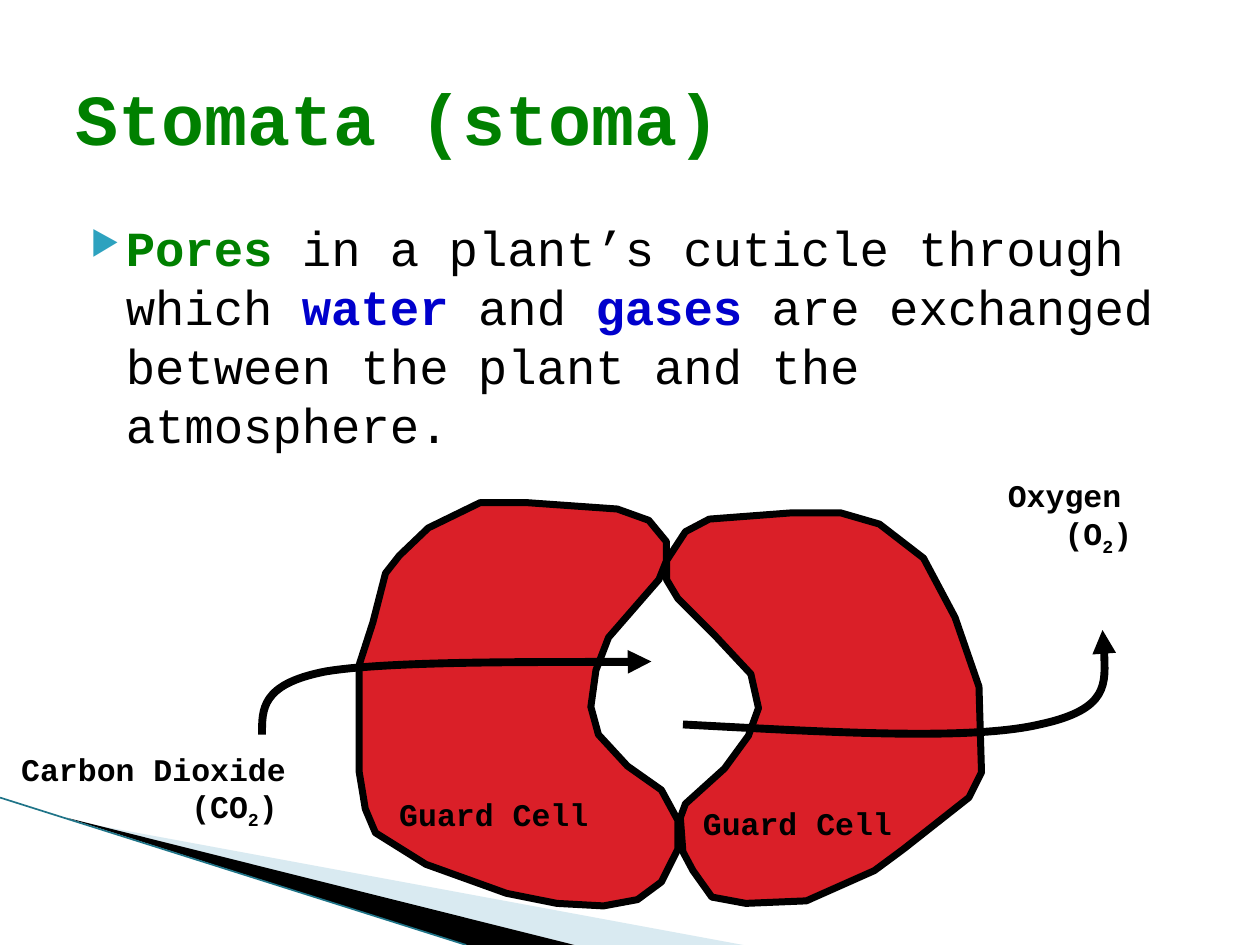
"""Build a slide that explains plant stomata with a guard cell diagram."""
from pptx import Presentation
from pptx.dml.color import RGBColor
from pptx.enum.shapes import MSO_CONNECTOR as Connector
from pptx.enum.text import MSO_ANCHOR as Anchor
from pptx.oxml.ns import qn
from pptx.util import Inches, Pt
from lxml.etree import SubElement

FONT = "Courier New"
BLACK = RGBColor(0x00, 0x00, 0x00)
GREEN = RGBColor(0x00, 0x80, 0x00)
BLUE = RGBColor(0x00, 0x00, 0xCC)
RED = RGBColor(0xDA, 0x1F, 0x28)
PALE = RGBColor(0xA0, 0xCB, 0xDC)
TEAL = RGBColor(0x1F, 0x74, 0x88)
BULLET = RGBColor(0x2D, 0xA2, 0xBF)

HEADING = {"size": Pt(41), "bold": True, "color": GREEN}
PLAIN = {"size": Pt(28), "bold": False, "color": BLACK}
KEY_GREEN = {**PLAIN, "bold": True, "color": GREEN}
KEY_BLUE = {**PLAIN, "bold": True, "color": BLUE}
LABEL = {"size": Pt(18), "bold": True, "color": BLACK}

TITLE = [[("Stomata (stoma)", HEADING)]]
DEFINITION = [[
    ("Pores", KEY_GREEN),
    (" in a plant’s cuticle through which ", PLAIN),
    ("water", KEY_BLUE),
    (" and ", PLAIN),
    ("gases", KEY_BLUE),
    (" are exchanged between the plant and the atmosphere.", PLAIN),
]]
GUARD_LABELS = [(5.48, 6.33), (3.07, 6.26)]
GAS_LABELS = [
    ("Carbon Dioxide", "(CO", 1.35, (0.07, 5.9, 2.66, 0.9)),
    ("Oxygen", "(O", 0.45, (7.9, 3.73, 1.42, 0.9)),
]

UNIT = Inches(0.01)
WEDGES = [
    ([(55, 651), (590, 750), (456, 750)], PALE, 40),
    ([(53, 649), (456, 750), (370, 750)], BLACK, 100),
]
GUARD_CELLS = [
    [(529, 430), (515, 413), (490, 404), (419, 399), (381, 399), (340, 419),
     (317, 441), (306, 455), (296, 494), (285, 528), (285, 612), (290, 642),
     (298, 661), (338, 686), (402, 709), (442, 717), (479, 719), (506, 714),
     (525, 700), (538, 674), (538, 651), (525, 627), (498, 608), (475, 583),
     (469, 561), (473, 532), (483, 506), (523, 460), (529, 445)],
    [(542, 676), (540, 649), (544, 638), (575, 610), (594, 584), (602, 562),
     (596, 535), (567, 504), (538, 475), (529, 460), (529, 445), (544, 422),
     (563, 412), (629, 407), (667, 407), (698, 416), (733, 443), (758, 490),
     (777, 545), (779, 613), (769, 633), (717, 674), (694, 691), (640, 715),
     (592, 717), (565, 712), (550, 691)],
]
GAS_ARROWS = [
    [(208, 583), (208, 563), (207, 543), (258, 533),
     (310, 524), (474, 526), (517, 525)],
    [(542, 575), (656, 581), (769, 588), (825, 575),
     (881, 563), (878, 531), (875, 500)],
]


def add_text(page, place, paragraphs, anchor=Anchor.TOP):
    box = page.shapes.add_textbox(*map(Inches, place))
    frame = box.text_frame
    frame.word_wrap = True
    frame.vertical_anchor = anchor
    for index, spans in enumerate(paragraphs):
        para = frame.add_paragraph() if index else frame.paragraphs[0]
        for text, style in spans:
            span = para.add_run()
            span.text = text
            span.font.name = FONT
            for name, value in style.items():
                if name == "color":
                    span.font.color.rgb = value
                else:
                    setattr(span.font, name, value)
    return frame


def set_indent(para, left, first=0):
    properties = para._p.get_or_add_pPr()
    properties.set("marL", str(Inches(left)))
    properties.set("indent", str(Inches(first)))
    return properties


def add_bullet(para):
    properties = set_indent(para, 0.4, -0.28)
    color = SubElement(properties, qn("a:buClr"))
    SubElement(color, qn("a:srgbClr"), val=str(BULLET))
    SubElement(properties, qn("a:buSzPct"), val="68000")
    SubElement(properties, qn("a:buChar"), char="▶")


def add_outline(page, points, fill=None, line_width=0, close=True):
    builder = page.shapes.build_freeform(*points[0], scale=UNIT)
    builder.add_line_segments(points[1:], close=close)
    shape = builder.convert_to_shape()
    shape.shadow.inherit = False
    if fill is None:
        shape.fill.background()
    else:
        shape.fill.solid()
        shape.fill.fore_color.rgb = fill
    if line_width:
        shape.line.color.rgb = BLACK
        shape.line.width = Pt(line_width)
    else:
        shape.line.fill.background()
    return shape


def add_wedge(page, points, fill, opacity):
    shape = add_outline(page, points, fill)
    color = shape._element.spPr.find(".//" + qn("a:srgbClr"))
    SubElement(color, qn("a:alpha"), val=str(opacity * 1000))


def add_curved_arrow(page, points):
    shape = add_outline(page, points, line_width=4.5, close=False)
    route = shape._element.spPr.find(".//" + qn("a:path"))
    steps = route.findall(qn("a:lnTo"))
    for start in range(0, len(steps), 3):
        curve = SubElement(route, qn("a:cubicBezTo"))
        for step in steps[start:start + 3]:
            curve.append(step[0])
            route.remove(step)
    line = shape._element.spPr.find(qn("a:ln"))
    SubElement(line, qn("a:tailEnd"), type="triangle")


def add_edge(page):
    ends = map(Inches, (0, 6.33, 3.7, 7.5))
    edge = page.shapes.add_connector(Connector.STRAIGHT, *ends)
    edge.line.color.rgb = TEAL
    edge.line.width = Pt(0.95)
    SubElement(edge._element.spPr, qn("a:effectLst"))


def main():
    deck = Presentation()
    deck.slide_width, deck.slide_height = Inches(10), Inches(7.5)
    page = deck.slides.add_slide(deck.slide_layouts[6])
    for wedge in WEDGES:
        add_wedge(page, *wedge)
    add_edge(page)
    add_text(page, (0.5, 0.3, 9, 1.25), TITLE, Anchor.MIDDLE)
    definition = add_text(page, (0.5, 1.68, 9, 2.2), DEFINITION)
    add_bullet(definition.paragraphs[0])
    for points in GUARD_CELLS:
        add_outline(page, points, RED, 4)
    for left, top in GUARD_LABELS:
        add_text(page, (left, top, 1.88, 0.5), [[("Guard Cell", LABEL)]])
    for (name, formula, indent, place), arrow in zip(GAS_LABELS, GAS_ARROWS):
        lines = [[(name, LABEL)],
                 [(formula, LABEL), ("2", LABEL), (")", LABEL)]]
        second = add_text(page, place, lines).paragraphs[1]
        set_indent(second, indent)
        second.runs[1].font._element.set("baseline", "-25000")
        add_curved_arrow(page, arrow)
    deck.save("out.pptx")


if __name__ == "__main__":
    main()
